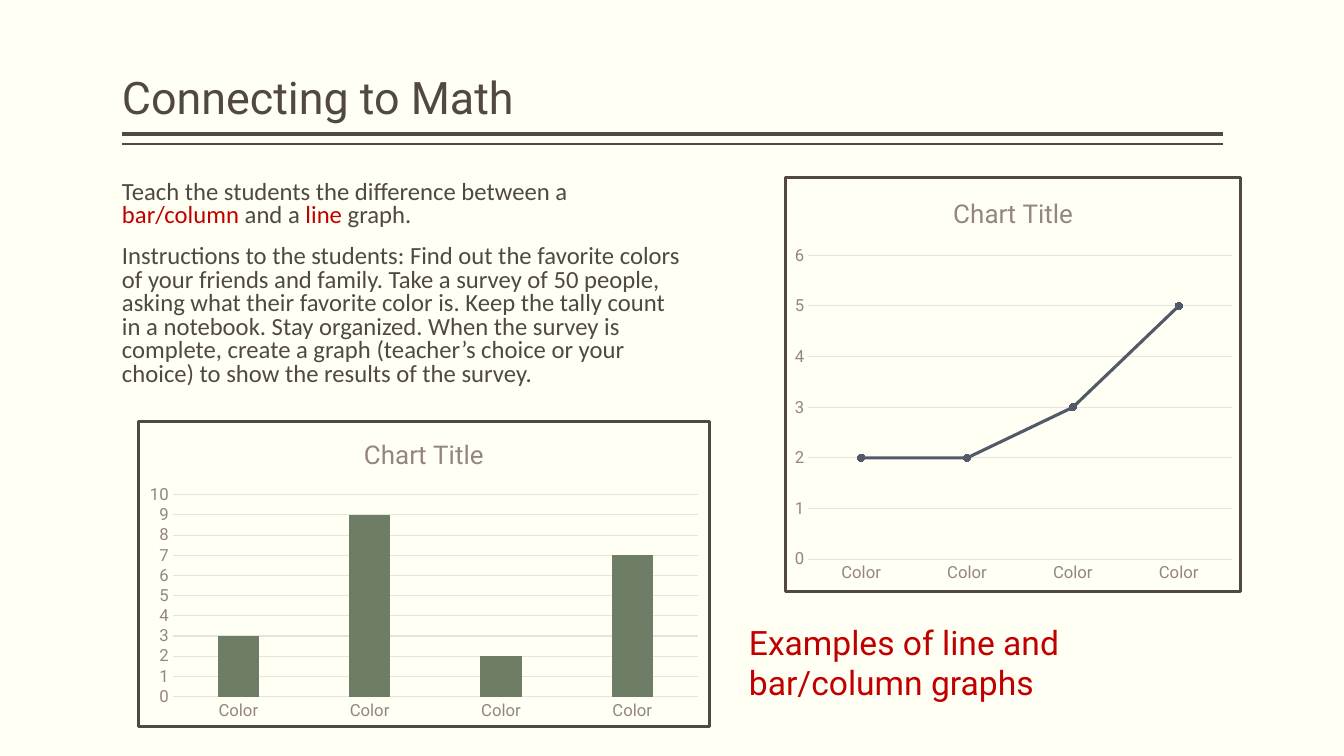
import pptx
import pptx.chart.data
import pptx.dml.color
import pptx.enum.chart
import pptx.enum.shapes
import pptx.enum.text
import pptx.oxml
import pptx.oxml.ns
import pptx.util

PX = 9144
INK, RED, GREY, GRID = "514843", "C00000", "94867E", "E6E3E1"
SLATE, GREEN, CREAM = "525A6A", "6D7D66", "FFFFF3"
CATEGORIES = ["Color"] * 4
CHART_TYPE = pptx.enum.chart.XL_CHART_TYPE
BODY = [
    [("Teach the students the difference between a ", INK), ("bar/column ", RED),
     ("and a ", INK), ("line", RED), (" graph.", INK)],
    [("Instructions to the students: Find out the favorite colors of your friends "
      "and family. Take a survey of 50 people, asking what their favorite color is. "
      "Keep the tally count in a notebook. Stay organized. When the survey is "
      "complete, create a graph (teacher’s choice or your choice) to show the "
      "results of the survey.", INK)],
]


def px(*lengths):
    """Turn pixel lengths into EMU."""
    return [length * PX for length in lengths]


def color(value):
    """Turn a hex string into a colour."""
    return pptx.dml.color.RGBColor.from_string(value)


def set_format(target, **values):
    """Set each named attribute on the target."""
    for name, value in values.items():
        setattr(target, name, value)


def set_font(font, size, value, name="Roboto"):
    """Set the size, colour and typeface of a font."""
    set_format(font, size=pptx.util.Pt(size), name=name, bold=False)
    font.color.rgb = color(value)


def set_line(line, value, width):
    """Set the colour and width of a line."""
    line.color.rgb = color(value)
    line.width = pptx.util.Pt(width)


def fill_text(shape, paragraphs, size, name="Roboto", paragraph_format=None, **frame_format):
    """Write paragraphs of coloured runs into a shape."""
    frame = shape.text_frame
    set_format(frame, word_wrap=True, **frame_format)
    for index, runs in enumerate(paragraphs):
        paragraph = frame.add_paragraph() if index else frame.paragraphs[0]
        set_format(paragraph, alignment=pptx.enum.text.PP_ALIGN.LEFT, **(paragraph_format or {}))
        for text, value in runs:
            run = paragraph.add_run()
            run.text = text
            set_font(run.font, size, value, name)


def add_rule(slide, top, width):
    """Draw a horizontal rule under the title."""
    rule = slide.shapes.add_connector(
        pptx.enum.shapes.MSO_CONNECTOR.STRAIGHT, *px(1213, top, 121, top))
    set_line(rule.line, INK, width)
    rule._element.spPr.append(pptx.oxml.parse_xml(
        f'<a:effectLst {pptx.oxml.ns.nsdecls("a")}/>'))


def add_border(chart):
    """Outline the whole chart area."""
    chart._chartSpace.chart.addnext(pptx.oxml.parse_xml(
        f'<c:spPr {pptx.oxml.ns.nsdecls("c", "a")}><a:noFill/>'
        f'<a:ln w="{pptx.util.Pt(2)}"><a:solidFill><a:srgbClr val="{INK}"/>'
        '</a:solidFill><a:round/></a:ln></c:spPr>'))


def add_chart(slide, kind, box, values, maximum):
    """Add a titled, bordered chart and return its plot."""
    data = pptx.chart.data.CategoryChartData()
    data.categories = CATEGORIES
    data.add_series("Series 1", values)
    chart = slide.shapes.add_chart(kind, *px(*box), data).chart
    set_format(chart, has_legend=False, has_title=True)
    set_font(chart.font, 10, INK)
    title = chart.chart_title
    title.include_in_layout = False
    title.text_frame.text = "Chart Title"
    set_font(title.text_frame.paragraphs[0].runs[0].font, 18.6, GREY)
    tick = pptx.enum.chart.XL_TICK_MARK.NONE
    for axis in (chart.category_axis, chart.value_axis):
        set_format(axis, major_tick_mark=tick, minor_tick_mark=tick)
        set_font(axis.tick_labels.font, 12, GREY)
    set_line(chart.category_axis.format.line, GRID, 0.75)
    value_axis = chart.value_axis
    set_format(value_axis, has_major_gridlines=True, minimum_scale=0,
               maximum_scale=maximum, major_unit=1)
    set_line(value_axis.major_gridlines.format.line, GRID, 0.75)
    value_axis.format.line.fill.background()
    add_border(chart)
    plot = chart.plots[0]
    plot.vary_by_categories = False
    return plot


def add_line_chart(slide):
    """Add the line graph example."""
    plot = add_chart(slide, CHART_TYPE.LINE_MARKERS_STACKED, (778, 175, 454, 413), (2, 2, 3, 5), 6)
    series = plot.series[0]
    series.smooth = False
    set_line(series.format.line, SLATE, 2.25)
    marker = series.marker
    set_format(marker, style=pptx.enum.chart.XL_MARKER_STYLE.CIRCLE, size=5)
    marker.format.fill.solid()
    marker.format.fill.fore_color.rgb = color(SLATE)
    set_line(marker.format.line, SLATE, 0.75)


def add_column_chart(slide):
    """Add the column graph example."""
    plot = add_chart(slide, CHART_TYPE.COLUMN_CLUSTERED, (136, 417, 569, 305), (3, 9, 2, 7), 10)
    set_format(plot, gap_width=219, overlap=-27)
    fill = plot.series[0].format.fill
    fill.solid()
    fill.fore_color.rgb = color(GREEN)


def main():
    """Build the slide and save it."""
    presentation = pptx.Presentation()
    width, height = px(1333, 750)
    set_format(presentation, slide_width=width, slide_height=height)
    slide = presentation.slides.add_slide(presentation.slide_layouts[5])
    slide.background.fill.solid()
    slide.background.fill.fore_color.rgb = color(CREAM)
    add_rule(slide, 133, 3)
    add_rule(slide, 143, 1)

    title = slide.shapes.title
    left, top, width, height = px(121, 8, 1092, 120)
    set_format(title, left=left, top=top, width=width, height=height)
    fill_text(title, [[("Connecting to Math", INK)]], 32,
              paragraph_format={"line_spacing": 0.9}, margin_left=0, margin_right=0,
              vertical_anchor=pptx.enum.text.MSO_ANCHOR.BOTTOM)

    body = slide.shapes.add_textbox(*px(121, 175, 562, 242))
    fill_text(body, BODY, 17.6, "Calibri",
              {"line_spacing": 0.8, "space_before": pptx.util.Pt(12)},
              margin_left=0, margin_right=0)
    add_line_chart(slide)
    add_column_chart(slide)
    caption = slide.shapes.add_textbox(*px(733, 612, 443, 91))
    fill_text(caption, [[("Examples of line and bar/column graphs", RED)]], 24,
              auto_size=pptx.enum.text.MSO_AUTO_SIZE.SHAPE_TO_FIT_TEXT)
    presentation.save("out.pptx")


if __name__ == "__main__":
    main()
